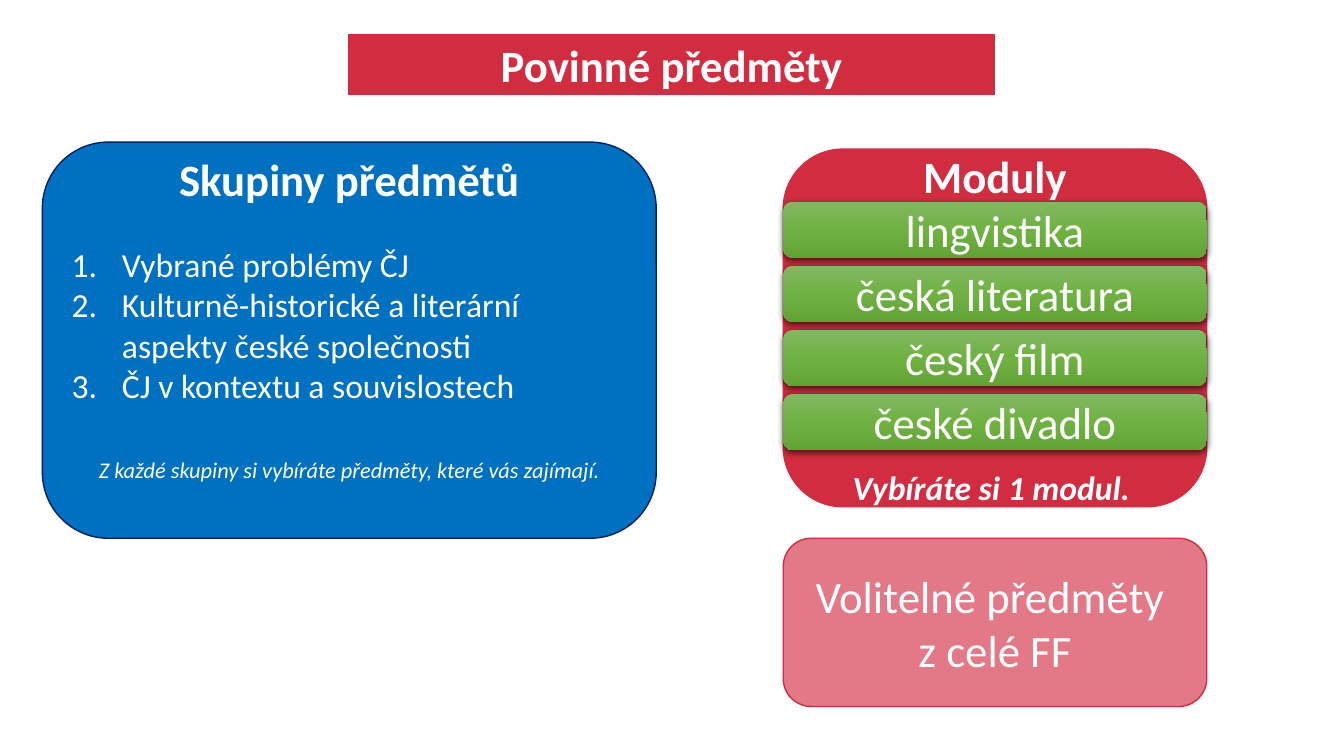
from lxml import etree
from pptx import Presentation
from pptx.dml.color import RGBColor
from pptx.enum.shapes import MSO_SHAPE
from pptx.enum.text import MSO_ANCHOR, MSO_AUTO_SIZE, PP_ALIGN
from pptx.oxml.ns import qn
from pptx.util import Pt

ROUNDED = MSO_SHAPE.ROUNDED_RECTANGLE
MIDDLE = MSO_ANCHOR.MIDDLE
NO_AUTOFIT = MSO_AUTO_SIZE.NONE
CENTER = PP_ALIGN.CENTER
LEFT = PP_ALIGN.LEFT

WHITE = RGBColor(0xFF, 0xFF, 0xFF)
BLACK = RGBColor(0x00, 0x00, 0x00)
RED = RGBColor(0xD2, 0x2C, 0x40)
PINK = RGBColor(0xE3, 0x79, 0x86)
BLUE = RGBColor(0x00, 0x70, 0xC0)
NAVY = RGBColor(0x00, 0x20, 0x60)
LIGHT_GREEN = RGBColor(0x81, 0xB8, 0x61)
GREEN = RGBColor(0x6F, 0xB2, 0x42)
DARK_GREEN = RGBColor(0x62, 0xA3, 0x36)

GREEN_STOPS = [(0, LIGHT_GREEN), (50, GREEN), (100, DARK_GREEN)]
RIGHT_COLUMN = 559.5
RIGHT_WIDTH = 302.5
MODULES = ["lingvistika", "česká literatura", "český film", "české divadlo"]
MODULE_TOP = 144
MODULE_HEIGHT = 40.2
MODULE_PITCH = 45.8
SUBJECT_GROUPS = [
    "Vybrané problémy ČJ",
    "Kulturně-historické a literární aspekty české společnosti",
    "ČJ v kontextu a souvislostech",
]


class SlideBuilder:
    font = "Calibri"
    heading_size = 32

    def __init__(self, presentation):
        self.slide = presentation.slides.add_slide(presentation.slide_layouts[5])

    def title(self, text, left, top, width, height):
        shape = self.slide.shapes.title
        shape.left, shape.top = Pt(left), Pt(top)
        shape.width, shape.height = Pt(width), Pt(height)
        geometry = etree.SubElement(
            shape._element.spPr, qn("a:prstGeom"), prst="roundRect"
        )
        etree.SubElement(geometry, qn("a:avLst"))
        self.paint(shape, RED, RED)
        self.text(shape, text, bold=True)

    def box(self, left, top, width, height, fill, line):
        shape = self.add_rounded(left, top, width, height)
        self.paint(shape, fill, line)
        return shape

    def bar(self, text, left, top, width, height):
        shape = self.add_rounded(left, top, width, height)
        shape.line.fill.background()
        shape.fill.gradient()
        shape.fill.gradient_angle = 270
        properties = shape._element.spPr
        stops = properties.find(".//" + qn("a:gsLst"))
        stops.clear()
        for percent, color in GREEN_STOPS:
            stop = etree.SubElement(stops, qn("a:gs"), pos=str(percent * 1000))
            etree.SubElement(stop, qn("a:srgbClr"), val=str(color))
        shadow = etree.SubElement(
            properties.find(qn("a:effectLst")),
            qn("a:outerShdw"),
            blurRad=str(Pt(4.5)),
            dist=str(Pt(1.5)),
            dir="5400000",
            rotWithShape="0",
        )
        color = etree.SubElement(shadow, qn("a:srgbClr"), val=str(BLACK))
        etree.SubElement(color, qn("a:alpha"), val="63000")
        self.text(shape, text)

    def add_rounded(self, left, top, width, height):
        shape = self.slide.shapes.add_shape(
            ROUNDED, Pt(left), Pt(top), Pt(width), Pt(height)
        )
        shape.shadow.inherit = False
        return shape

    def paint(self, shape, fill, line):
        shape.fill.solid()
        shape.fill.fore_color.rgb = fill
        shape.line.color.rgb = line
        shape.line.width = Pt(1)

    def text(self, shape, text, bold=False):
        frame = shape.text_frame
        frame.text = text
        frame.word_wrap = True
        frame.auto_size = NO_AUTOFIT
        frame.vertical_anchor = MIDDLE
        self.format(frame.paragraphs[0], self.heading_size, bold=bold)

    def add_paragraph(self, shape, text, size, before=0, bold=False, italic=False):
        paragraph = shape.text_frame.add_paragraph()
        paragraph.text = text
        paragraph.space_before = Pt(before)
        self.format(paragraph, size, bold, italic)
        return paragraph

    def add_numbered(self, shape, text, size, before=0):
        paragraph = self.add_paragraph(shape, text, size, before)
        paragraph.alignment = LEFT
        properties = paragraph._p.get_or_add_pPr()
        properties.set("marL", str(Pt(36)))
        properties.set("indent", str(Pt(-36)))
        etree.SubElement(properties, qn("a:buFont"), typeface="+mj-lt")
        etree.SubElement(properties, qn("a:buAutoNum"), type="arabicPeriod")

    def format(self, paragraph, size, bold=False, italic=False):
        paragraph.alignment = CENTER
        for run in paragraph.runs:
            run.font.name = self.font
            run.font.size = Pt(size)
            run.font.color.rgb = WHITE
            run.font.bold = bold
            run.font.italic = italic


def main():
    presentation = Presentation()
    presentation.slide_width = Pt(960)
    presentation.slide_height = Pt(540)
    builder = SlideBuilder(presentation)

    builder.title("Povinné předměty", 249, 24.5, 461.5, 43.2)

    groups = builder.box(30.25, 101.5, 438.5, 283, BLUE, NAVY)
    builder.text(groups, "Skupiny předmětů", bold=True)
    groups.text_frame.margin_top = Pt(0)
    groups.text_frame.margin_bottom = Pt(33)
    for index, group in enumerate(SUBJECT_GROUPS):
        builder.add_numbered(groups, group, 24, before=0 if index else 27.5)
    builder.add_paragraph(
        groups,
        "Z každé skupiny si vybíráte předměty, které vás zajímají.",
        16,
        before=36,
        italic=True,
    )

    modules = builder.box(RIGHT_COLUMN, 106.5, RIGHT_WIDTH, 255.5, RED, RED)
    builder.text(modules, "Moduly", bold=True)
    builder.add_paragraph(
        modules, "Vybíráte si 1 modul. ", 24, before=189, bold=True, italic=True
    )

    electives = builder.box(RIGHT_COLUMN, 384.5, RIGHT_WIDTH, 120.2, PINK, RED)
    builder.text(electives, "Volitelné předměty \vz celé FF")

    for index, module in enumerate(MODULES):
        top = MODULE_TOP + index * MODULE_PITCH
        builder.bar(module, RIGHT_COLUMN, top, RIGHT_WIDTH, MODULE_HEIGHT)

    presentation.save("out.pptx")


if __name__ == "__main__":
    main()
